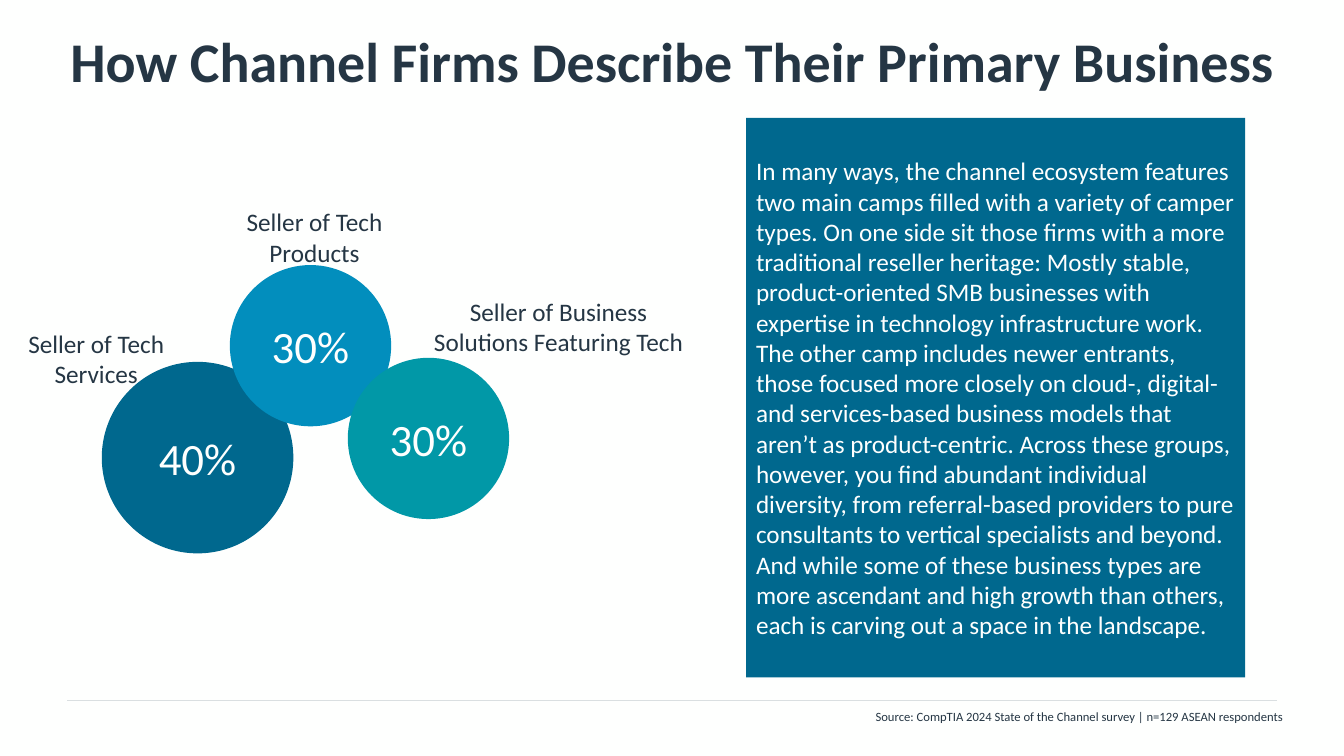
from lxml.etree import SubElement
from pptx import Presentation
from pptx.dml.color import RGBColor
from pptx.enum.shapes import MSO_CONNECTOR, MSO_SHAPE
from pptx.enum.text import MSO_ANCHOR, MSO_AUTO_SIZE, PP_ALIGN
from pptx.oxml.ns import qn
from pptx.util import Inches, Pt

INK, PAPER, NAVY, BLUE, TEAL, RULE = (
    "253644", "FEFFFE", "00688E", "028EBD", "0198A7", "DADFE1")


def color(hex_string):
    return RGBColor.from_string(hex_string)


def write(holder, text, size, ink, anchor=MSO_ANCHOR.TOP,
          align=PP_ALIGN.CENTER, bold=False, **spacing):
    frame = holder.text_frame
    frame.word_wrap = True
    frame.auto_size = MSO_AUTO_SIZE.NONE
    frame.vertical_anchor = anchor
    paragraph = frame.paragraphs[0]
    paragraph.text = text
    paragraph.alignment = align
    for name, value in spacing.items():
        setattr(paragraph, name, value)
    font = paragraph.runs[0].font
    for name, value in {"name": "Calibri", "size": Pt(size), "bold": bold}.items():
        setattr(font, name, value)
    font.color.rgb = color(ink)


deck = Presentation()
deck.slide_width, deck.slide_height = Inches(13.33), Inches(7.5)
slide = deck.slides.add_slide(deck.slide_layouts[5])
slide.background.fill.solid()
slide.background.fill.fore_color.rgb = color(PAPER)

# Footer rule, with equal side margins
margin = deck.slide_width // 20
rule_top = Inches(6.95)
footer_rule = slide.shapes.add_connector(
    MSO_CONNECTOR.STRAIGHT, margin, rule_top, deck.slide_width - margin, rule_top)
footer_rule.line.color.rgb = color(RULE)
footer_rule.line.width = Pt(0.5)
SubElement(footer_rule._element.spPr, qn("a:effectLst"))

# Title across the full slide width
headline = slide.shapes.title
headline.left, headline.top = 0, Inches(-0.21)
headline.width, headline.height = deck.slide_width, Inches(1.7)
write(headline, "How Channel Firms Describe Their Primary Business", 40, INK,
      MSO_ANCHOR.MIDDLE, bold=True, line_spacing=0.9, space_after=Pt(6))

# Share bubbles and the commentary panel
commentary = (
    "In many ways, the channel ecosystem features two main camps filled with a "
    "variety of camper types. On one side sit those firms with a more traditional "
    "reseller heritage: Mostly stable, product-oriented SMB businesses with "
    "expertise in technology infrastructure work. The other camp includes newer "
    "entrants, those focused more closely on cloud-, digital- and services-based "
    "business models that aren’t as product-centric. Across these groups, however, "
    "you find abundant individual diversity, from referral-based providers to pure "
    "consultants to vertical specialists and beyond. And while some of these "
    "business types are more ascendant and high growth than others, each is "
    "carving out a space in the landscape.")
filled_parts = [
    (MSO_SHAPE.OVAL, (1.01, 3.59, 1.9, 1.9), NAVY, "40%", 32, PP_ALIGN.CENTER, 0),
    (MSO_SHAPE.OVAL, (2.28, 2.63, 1.6, 1.6), BLUE, "30%", 32, PP_ALIGN.CENTER, 0),
    (MSO_SHAPE.OVAL, (3.45, 3.55, 1.6, 1.6), TEAL, "30%", 32, PP_ALIGN.CENTER, 0),
    (MSO_SHAPE.RECTANGLE, (7.4, 1.17, 4.95, 5.55), NAVY, commentary, 18,
     PP_ALIGN.LEFT, 10),
]
for outline, place, fill, text, size, align, after in filled_parts:
    part = slide.shapes.add_shape(outline, *map(Inches, place))
    part.shadow.inherit = False
    part.fill.solid()
    part.fill.fore_color.rgb = color(fill)
    part.line.fill.background()
    write(part, text, size, PAPER, MSO_ANCHOR.MIDDLE, align, space_after=Pt(after))

# Bubble labels and the source line
captions = [
    ((2.26, 2, 1.72, 0.71), "Seller of Tech Products", 18, PP_ALIGN.CENTER),
    ((0.17, 3.21, 1.57, 0.71), "Seller of Tech Services", 18, PP_ALIGN.CENTER),
    ((4.15, 2.89, 2.78, 0.71), "Seller of Business Solutions Featuring Tech", 18,
     PP_ALIGN.CENTER),
    ((6.33, 6.98, 6.49, 0.25),
     "Source: CompTIA 2024 State of the Channel survey | n=129 ASEAN respondents",
     9, PP_ALIGN.RIGHT),
]
for place, text, size, align in captions:
    caption = slide.shapes.add_textbox(*map(Inches, place))
    write(caption, text, size, INK, align=align)

deck.save("out.pptx")
